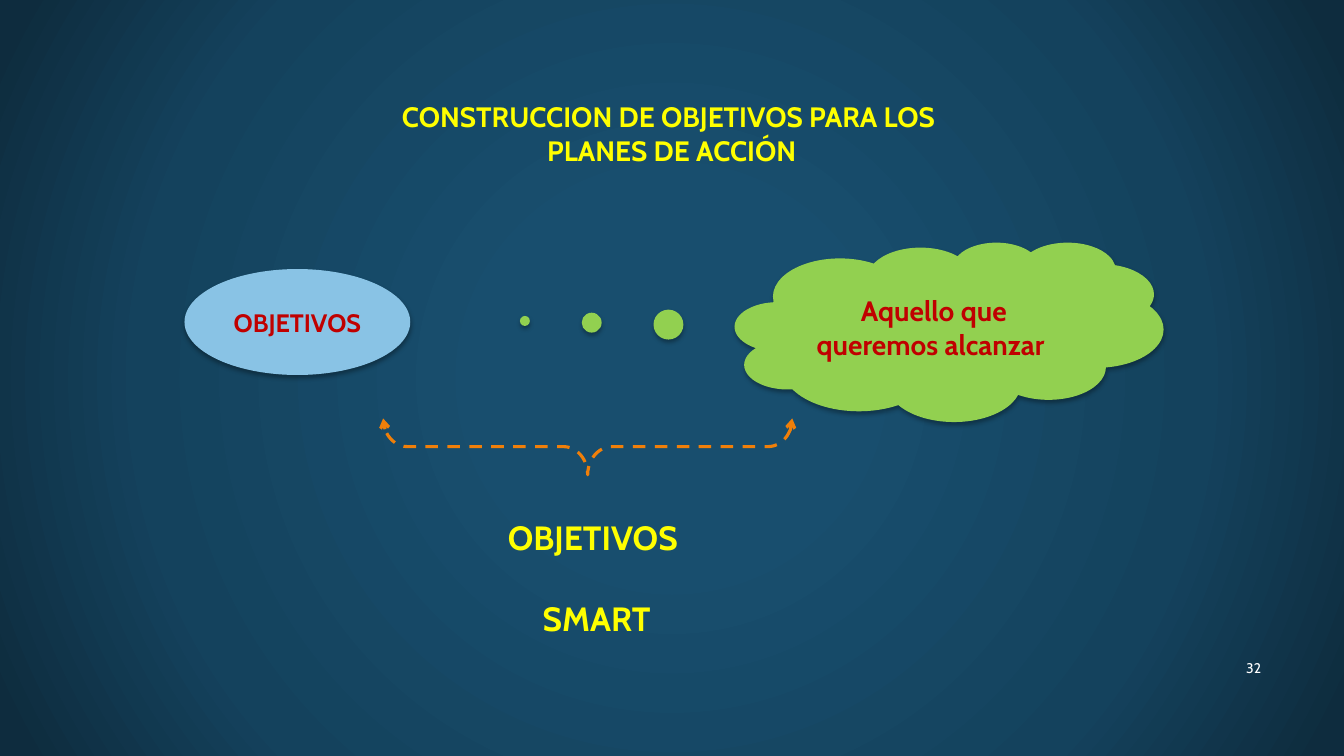
from pptx import Presentation
from pptx.dml.color import RGBColor
from pptx.enum.dml import MSO_LINE
from pptx.enum.shapes import MSO_SHAPE as Shape
from pptx.enum.text import MSO_ANCHOR as Anchor, PP_ALIGN as Align
from pptx.oxml import parse_xml
from pptx.oxml.ns import nsdecls
from pptx.util import Cm, Pt
from lxml.etree import SubElement

YELLOW, RED = "FFFF00", "C00000"
BACKDROP = [(0, "184E6E"), (23, "184E6E"), (69, "14425D"), (97, "0E2C3E")]


def rgb(value):
    return RGBColor.from_string(value)


def write(shape, lines, size, color, bold=True, align=Align.CENTER, anchor=Anchor.MIDDLE, gap=0):
    frame = shape.text_frame
    frame.word_wrap = True
    frame.vertical_anchor = anchor
    for i, line in enumerate(lines):
        paragraph = frame.add_paragraph() if i else frame.paragraphs[0]
        paragraph.alignment = align
        if i and gap:
            paragraph.space_before = Pt(gap)
        run = paragraph.add_run()
        run.text = line
        run.font.name = "Cabin"
        run.font.size = Pt(size)
        run.font.bold = bold
        run.font.color.rgb = rgb(color)


prs = Presentation()
prs.slide_width, prs.slide_height = Cm(33.87), Cm(19.05)
slide = prs.slides.add_slide(prs.slide_layouts[6])
shapes = slide.shapes

# Radial background
fill = slide.background.fill
fill.solid()
stops = "".join(
    f'<a:gs pos="{pos * 1000}"><a:srgbClr val="{color}"/></a:gs>' for pos, color in BACKDROP
)
gradient = parse_xml(
    f'<a:gradFill {nsdecls("a")} rotWithShape="1"><a:gsLst>{stops}</a:gsLst>'
    '<a:path path="circle"><a:fillToRect l="50000" t="50000" r="50000" b="50000"/></a:path>'
    "</a:gradFill>"
)
solid = slide.background._cSld.find(".//" + "{http://schemas.openxmlformats.org/drawingml/2006/main}solidFill")
solid.getparent().replace(solid, gradient)

# Slide number and title
number = shapes.add_textbox(Cm(28.52), Cm(16.31), Cm(3.51), Cm(1.04))
write(number, ["32"], 10, "FFFFFF", bold=False, align=Align.RIGHT)
title = shapes.add_textbox(Cm(9.83), Cm(2.39), Cm(14.2), Cm(1.96))
write(title, ["CONSTRUCCION DE OBJETIVOS PARA LOS ", "PLANES DE ACCIÓN"], 20, YELLOW, anchor=Anchor.TOP)

# Objectives and the thought they lead to
objectives = shapes.add_shape(Shape.OVAL, Cm(4.65), Cm(6.78), Cm(5.69), Cm(2.67))
thought = shapes.add_shape(Shape.CLOUD_CALLOUT, Cm(18.52), Cm(6.1), Cm(10.8), Cm(4.52))
thought.adjustments[0] = -0.99
thought.adjustments[1] = -0.06
for bubble, color, label, size in [
    (objectives, "89C3E5", "OBJETIVOS", 18),
    (thought, "92D050", "Aquello que queremos alcanzar ", 20),
]:
    bubble.fill.solid()
    bubble.fill.fore_color.rgb = rgb(color)
    bubble.line.fill.background()
    bubble.shadow.inherit = False
    bubble._element.spPr[-1].append(parse_xml(
        f'<a:outerShdw {nsdecls("a")} blurRad="{Pt(3.5)}" dist="{Pt(2.2)}" dir="5400000" rotWithShape="0">'
        '<a:srgbClr val="000000"><a:alpha val="32000"/></a:srgbClr></a:outerShdw>'
    ))
    write(bubble, [label], size, RED)

# Dashed brace joining both
brace = shapes.add_shape(Shape.RIGHT_BRACE, Cm(14.1), Cm(6.1), Cm(1.42), Cm(10.31))
brace.rotation = 90
brace.adjustments[0] = 0.43
brace.adjustments[1] = 0.5
brace.fill.background()
brace.shadow.inherit = False
brace.line.color.rgb = rgb("F07F09")
brace.line.width = Pt(2.25)
brace.line.dash_style = MSO_LINE.DASH
outline = brace.line._get_or_add_ln()
for end in ("headEnd", "tailEnd"):
    SubElement(outline, "{http://schemas.openxmlformats.org/drawingml/2006/main}" + end, type="arrow")

# Result
smart = shapes.add_textbox(Cm(11.79), Cm(12.9), Cm(6.3), Cm(3.33))
write(smart, ["OBJETIVOS", " SMART"], 24, YELLOW, anchor=Anchor.TOP, gap=29)

prs.save("out.pptx")
